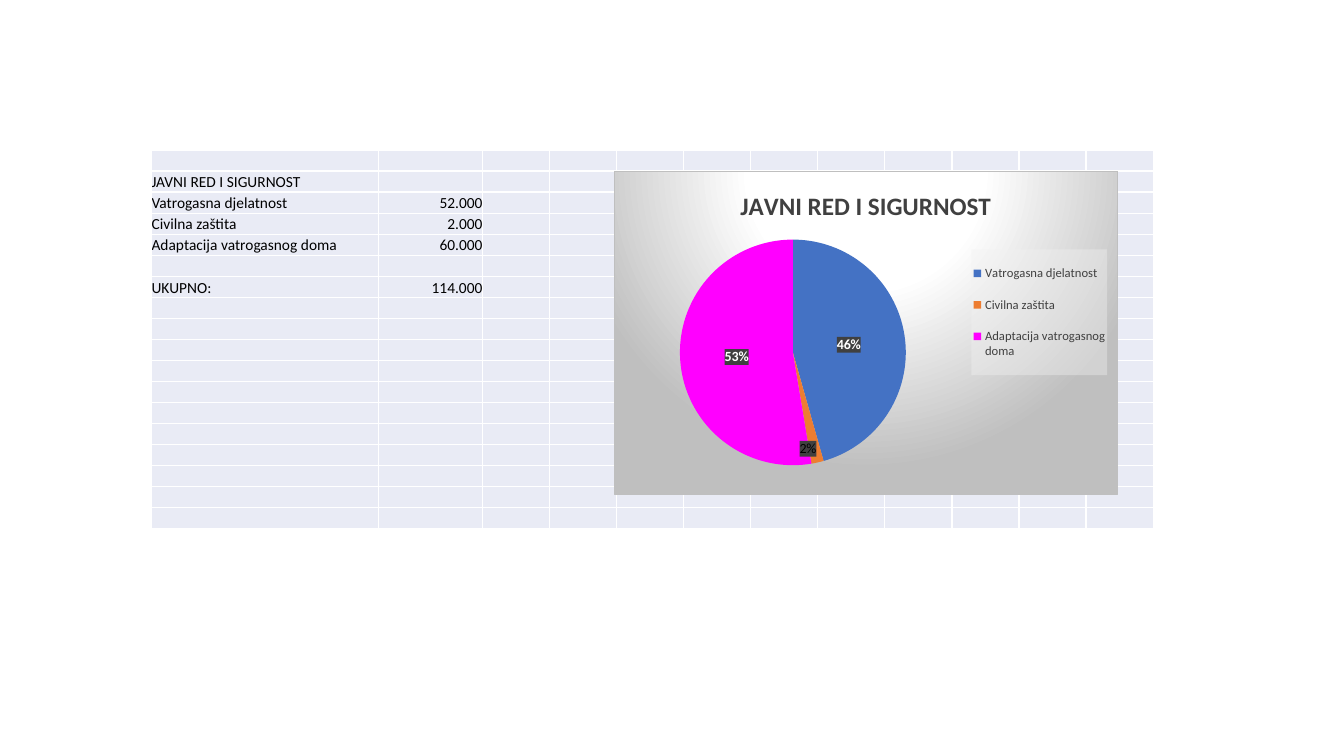
import copy
import pptx
import pptx.chart.data
import pptx.dml.color
import pptx.enum.chart
import pptx.enum.text
import pptx.oxml
import pptx.oxml.ns
import pptx.util

Cm = pptx.util.Cm
Pt = pptx.util.Pt
ALIGN = pptx.enum.text.PP_ALIGN
LABEL = pptx.enum.chart.XL_LABEL_POSITION

HEADING = "JAVNI RED I SIGURNOST"
EXPENSES = [
    ("Vatrogasna djelatnost", 52000, "4472C4"),
    ("Civilna zaštita", 2000, "ED7D31"),
    ("Adaptacija vatrogasnog doma", 60000, "FF00FF"),
]
TOTAL = ("UKUPNO:", sum(amount for _, amount, _ in EXPENSES))
HEADING_ROW = 1
TOTAL_ROW = HEADING_ROW + len(EXPENSES) + 2
ROWS = 18
ROW_HEIGHT = 0.53
COLUMN_WIDTHS = [5.72, 2.62] + [1.69] * 10
SHEET_LEFT, SHEET_TOP = 3.82, 3.78
PIE_FRAME = (15.47, 4.32, 12.7, 8.15)
PIE_AREA = (0.13, 0.21, 0.45, 0.7)
LEGEND_AREA = (0.71, 0.24, 0.27, 0.39)
FONT = "Calibri"
NS = pptx.oxml.ns.nsdecls("a", "c")


def rgb(code):
    return pptx.dml.color.RGBColor.from_string(code)


def style(font, size, color, bold=False):
    font.name, font.size, font.bold = FONT, Pt(size), bold
    font.color.rgb = rgb(color)


def write(frame, text, size=11, color="000000", bold=False, align=None):
    paragraph = frame.paragraphs[0]
    paragraph.alignment = align
    run = paragraph.add_run()
    run.text = text
    style(run.font, size, color, bold)


def chart_fill(color, alpha):
    return pptx.oxml.parse_xml(
        f'<c:spPr {NS}><a:solidFill><a:srgbClr val="{color}"><a:alpha val="{alpha * 1000}"/>'
        f'</a:srgbClr></a:solidFill><a:ln><a:noFill/></a:ln></c:spPr>')


def chart_layout(area, inner=False):
    target = '<c:layoutTarget val="inner"/>' if inner else ""
    modes = '<c:xMode val="edge"/><c:yMode val="edge"/>'
    sides = "".join(f'<c:{side} val="{value}"/>' for side, value in zip("xywh", area))
    return pptx.oxml.parse_xml(
        f"<c:layout {NS}><c:manualLayout>{target}{modes}{sides}</c:manualLayout></c:layout>")


def format_cell(cell):
    cell.margin_left = cell.margin_right = cell.margin_top = cell.margin_bottom = 0
    cell.vertical_anchor = pptx.enum.text.MSO_ANCHOR.BOTTOM
    cell.fill.solid()
    cell.fill.fore_color.rgb = rgb("E9EBF5")
    properties = cell._tc.get_or_add_tcPr()
    for index, side in enumerate(("lnL", "lnR", "lnT", "lnB")):
        properties.insert(index, pptx.oxml.parse_xml(
            f'<a:{side} {NS} w="12700"><a:solidFill><a:srgbClr val="FFFFFF"/>'
            f'</a:solidFill></a:{side}>'))
    cell.text_frame.paragraphs[0]._p.append(
        pptx.oxml.parse_xml(f'<a:endParaRPr {NS} sz="1100"/>'))


def add_sheet(slide):
    sheet = slide.shapes.add_table(
        ROWS, len(COLUMN_WIDTHS), Cm(SHEET_LEFT), Cm(SHEET_TOP),
        Cm(sum(COLUMN_WIDTHS)), Cm(ROWS * ROW_HEIGHT)).table
    sheet.first_row = sheet.horz_banding = False
    for column, width in zip(sheet.columns, COLUMN_WIDTHS):
        column.width = Cm(width)
    for row in sheet.rows:
        row.height = Cm(ROW_HEIGHT)
    for cell in sheet.iter_cells():
        format_cell(cell)
    write(sheet.cell(HEADING_ROW, 0).text_frame, HEADING)
    lines = {HEADING_ROW + 1 + i: item[:2] for i, item in enumerate(EXPENSES)}
    lines[TOTAL_ROW] = TOTAL
    for row, (label, amount) in lines.items():
        write(sheet.cell(row, 0).text_frame, label)
        write(sheet.cell(row, 1).text_frame, f"{amount:,}".replace(",", "."), align=ALIGN.RIGHT)


def add_labels(series):
    labels = series.data_labels
    labels.show_value, labels.show_percentage = False, True
    labels.number_format, labels.number_format_is_linked = "0%", False
    labels.position = LABEL.CENTER
    style(labels.font, 10, "FFFFFF", bold=True)
    root = labels._element
    root.xpath("c:numFmt")[0].addnext(chart_fill("404040", 90))
    series.points[1].data_label.position = LABEL.INSIDE_END
    small = root.xpath("c:dLbl")[0]
    for index, part in enumerate(root.xpath("c:numFmt | c:spPr | c:txPr"), 1):
        small.insert(index, copy.deepcopy(part))
    small.xpath("c:showVal")[0].set("val", "0")
    small.xpath("c:showPercent")[0].set("val", "1")


def add_pie(slide):
    data = pptx.chart.data.CategoryChartData()
    data.categories = [name for name, _, _ in EXPENSES]
    data.add_series(HEADING, [amount for _, amount, _ in EXPENSES])
    chart = slide.shapes.add_chart(
        pptx.enum.chart.XL_CHART_TYPE.PIE, *map(Cm, PIE_FRAME), data).chart
    style(chart.font, 10, "000000")
    chart.has_title = True
    write(chart.chart_title.text_frame, HEADING, size=18, color="404040", bold=True)
    chart.chart_title.include_in_layout = False
    chart.has_legend = True
    chart.legend.position = pptx.enum.chart.XL_LEGEND_POSITION.RIGHT
    chart.legend.include_in_layout = False
    style(chart.legend.font, 9, "404040")
    plot = chart.plots[0]
    plot.vary_by_categories = True
    series = plot.series[0]
    for index, (_, _, color) in enumerate(EXPENSES):
        fill = series.points[index].format.fill
        fill.solid()
        fill.fore_color.rgb = rgb(color)
    add_labels(series)

    root = chart.element
    for old in root.xpath("c:chart/c:plotArea/c:layout | c:chart/c:legend/c:layout"):
        old.getparent().remove(old)
    root.xpath("c:chart/c:plotArea")[0].insert(0, chart_layout(PIE_AREA, inner=True))
    root.xpath("c:chart/c:legend/c:legendPos")[0].addnext(chart_layout(LEGEND_AREA))
    root.xpath("c:chart/c:legend/c:overlay")[0].addnext(chart_fill("F2F2F2", 39))
    stops = "".join(f'<a:gs pos="{pos * 1000}"><a:srgbClr val="{color}"/></a:gs>'
                    for pos, color in ((0, "FFFFFF"), (39, "FFFFFF"), (100, "BFBFBF")))
    root.xpath("c:chart")[0].addnext(pptx.oxml.parse_xml(
        f'<c:spPr {NS}><a:gradFill><a:gsLst>{stops}</a:gsLst><a:path path="circle">'
        '<a:fillToRect l="50000" t="-80000" r="50000" b="180000"/></a:path></a:gradFill>'
        '<a:ln w="9525"><a:solidFill><a:srgbClr val="BFBFBF"/></a:solidFill></a:ln></c:spPr>'))


def main():
    deck = pptx.Presentation()
    deck.slide_width, deck.slide_height = Cm(33.87), Cm(19.05)
    slide = deck.slides.add_slide(deck.slide_layouts[6])
    add_sheet(slide)
    add_pie(slide)
    deck.save("out.pptx")


if __name__ == "__main__":
    main()
